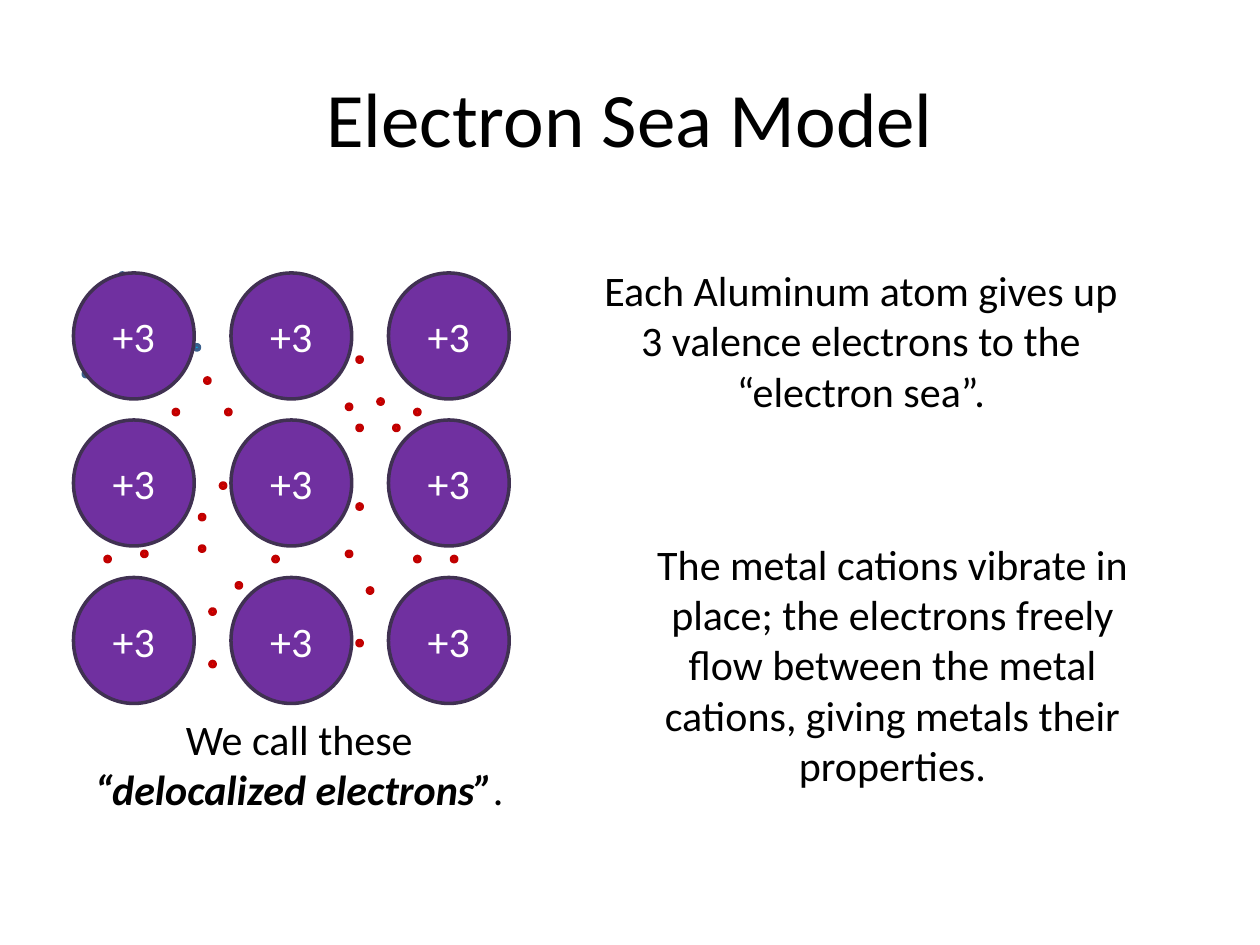
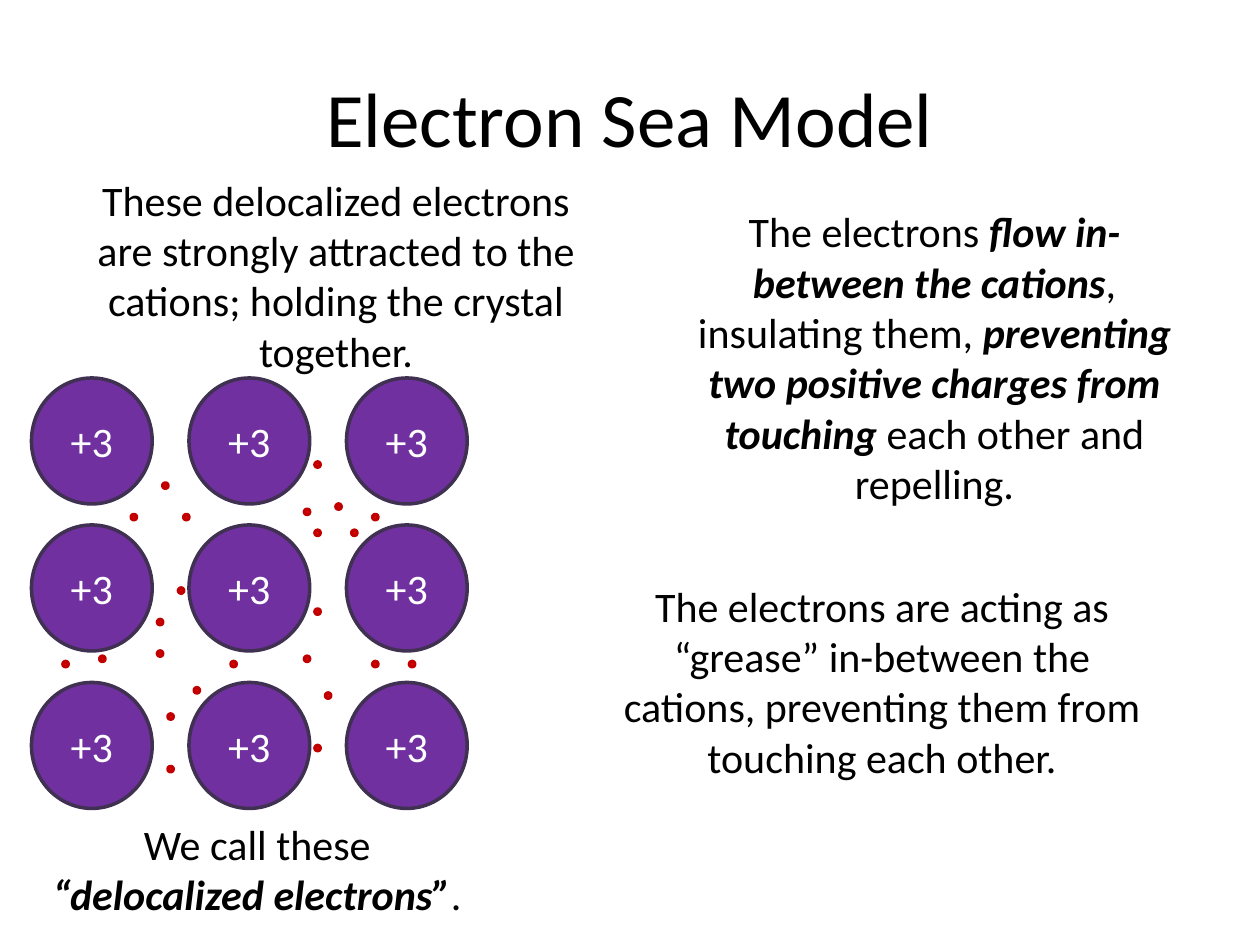
from pptx import Presentation
from pptx.dml.color import RGBColor
from pptx.enum.shapes import MSO_SHAPE
from pptx.enum.text import MSO_ANCHOR, PP_ALIGN
from pptx.util import Pt

OVAL = MSO_SHAPE.OVAL
TOP, MIDDLE = MSO_ANCHOR.TOP, MSO_ANCHOR.MIDDLE
CENTER = PP_ALIGN.CENTER

CATION_COLUMNS = (0, 90, 180)
CATION_ROWS = (0, 84, 174)
FREE_ELECTRONS = (
    (57, 78), (87, 78), (75, 60), (174, 72), (162, 87), (162, 48),
    (156, 75), (183, 87), (195, 78), (84, 120), (78, 222), (72, 138),
    (18, 162), (78, 192), (114, 162), (168, 180), (162, 210), (162, 132),
    (156, 159), (216, 162), (195, 162), (39, 159), (93, 177), (72, 156),
)
BOUND_ELECTRONS = ((26.4, 0), (69, 41), (5.6, 56.3))


def color(value):
    return RGBColor.from_string(value)


class Deck:
    font = "Calibri"
    body_size = 24
    title_size = 44
    text_color = "000000"
    cation_style = ("7030A0", "403152")
    free_style = ("FF0000", "C00000")
    bound_style = ("00B0F0", "3A5F8C")

    def __init__(self):
        self.presentation = Presentation()
        self.presentation.slide_width = Pt(720)
        self.presentation.slide_height = Pt(540)
        self.slide = None

    def add_slide(self, title):
        layout = self.presentation.slide_layouts[6]
        self.slide = self.presentation.slides.add_slide(layout)
        self.text(36, 21.6, 648, 90, title, size=self.title_size, anchor=MIDDLE)

    def fill_text(self, shape, runs, size, text_color, anchor):
        frame = shape.text_frame
        frame.word_wrap = True
        frame.vertical_anchor = anchor
        paragraph = frame.paragraphs[0]
        paragraph.alignment = CENTER
        for index, content in enumerate(runs):
            run = paragraph.add_run()
            run.text = content
            run.font.name = self.font
            run.font.size = Pt(size)
            run.font.color.rgb = color(text_color)
            run.font.bold = run.font.italic = index % 2 == 1

    def text(self, left, top, width, height, *runs, size=body_size, anchor=TOP):
        box = self.slide.shapes.add_textbox(Pt(left), Pt(top), Pt(width), Pt(height))
        self.fill_text(box, runs, size, self.text_color, anchor)

    def oval(self, left, top, width, height, style):
        shape = self.slide.shapes.add_shape(
            OVAL, Pt(left), Pt(top), Pt(width), Pt(height))
        fill, line = style
        shape.shadow.inherit = False
        shape.fill.solid()
        shape.fill.fore_color.rgb = color(fill)
        shape.line.color.rgb = color(line)
        shape.line.width = Pt(2)
        return shape

    def electrons(self, left, top, positions, style):
        for x, y in positions:
            self.oval(left + x, top + y, 3, 3, style)

    def lattice(self, left, top):
        for y in CATION_ROWS:
            for x in CATION_COLUMNS:
                cation = self.oval(left + x, top + y, 69, 72, self.cation_style)
                self.fill_text(cation, ["+3"], self.body_size, "FFFFFF", MIDDLE)
        self.electrons(left, top, FREE_ELECTRONS, self.free_style)
        self.text(left, top + 248, 258, 65,
                  "We call these ", "“delocalized electrons”", ".")


def main():
    deck = Deck()

    deck.add_slide("Electron Sea Model")
    deck.text(336, 147.6, 312, 94,
              "Each Aluminum atom gives up 3 valence electrons to the “electron sea”.")
    deck.text(354, 304, 312, 153,
              "The metal cations vibrate in place; the electrons freely flow "
              "between the metal cations, giving metals their properties.")
    deck.electrons(42, 156, BOUND_ELECTRONS, deck.bound_style)
    deck.lattice(42, 156)

    deck.add_slide("Electron Sea Model")
    deck.text(36, 96, 312, 124,
              "These delocalized electrons are strongly attracted to the cations; "
              "holding the crystal together.")
    deck.text(378, 114, 312, 182,
              "The electrons ", "flow in-between the cations", ", insulating them, ",
              "preventing two positive charges from touching",
              " each other and repelling.")
    deck.lattice(18, 216)
    deck.text(348, 328, 312, 124,
              "The electrons are acting as “grease” in-between the cations, "
              "preventing them from touching each other.")

    deck.presentation.save("out.pptx")


if __name__ == "__main__":
    main()
